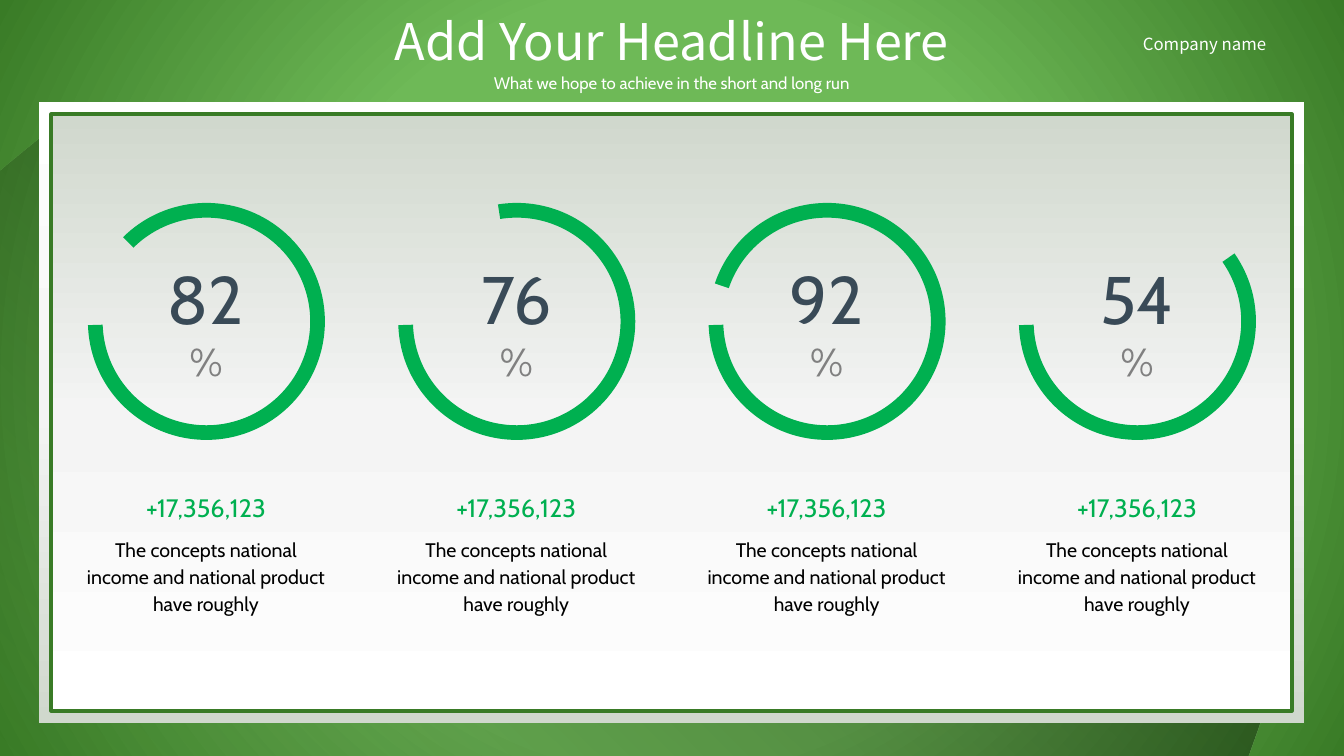
"""Build a slide of four percentage rings in a framed panel."""
import pptx
import pptx.util
import pptx.dml.color
import pptx.enum.shapes
import pptx.enum.text
import pptx.oxml.ns
import lxml.etree

HEAD = "Add Your Headline Here"
SUB = "What we hope to achieve in the short and long run"
FIRM = "Company name"
RINGS = [("82", 135.18), ("76", 156.51), ("92", 119.22), ("54", 194.99)]
TOTAL = "+17,356,123"
NOTE = "The concepts national income and national product have roughly"

COLORS = {
    "leaf": "6EB957", "moss": "397B26", "ring": "00B050", "slate": "394A57",
    "gray": "808080", "white": "FFFFFF", "pale": "F4F4F4", "sage": "D0D8CD",
    "black": "000000",
}
SANS, CABIN = "Noto Sans CJK SC", "Cabin"
SHADE = [(39, 139), (1269, 694), (1247, 756), (0, 756), (0, 171)]
PANEL = [(0, "white", 100), (50, "pale", 100), (100, "sage", 100)]
FIRST, LAST = 206, 1137
RING_END, RING_THICK = 106.92, 0.062
SCALE = 914400 / 100.8
SHAPES = pptx.enum.shapes.MSO_SHAPE
ANCHOR = pptx.enum.text.MSO_ANCHOR
ALIGN = pptx.enum.text.PP_ALIGN


def emu(px):
    return pptx.util.Emu(round(px * SCALE))


def rgb(name):
    return pptx.dml.color.RGBColor.from_string(COLORS[name])


def blend(owner, fill, stops, angle=None):
    """Give a fill its stops; without an angle it runs out from the centre."""
    fill.gradient()
    tag = pptx.oxml.ns.qn
    node = owner.find(".//" + tag("a:gradFill"))
    node.clear()
    add = lxml.etree.SubElement
    items = add(node, tag("a:gsLst"))
    for pos, name, alpha in stops:
        stop = add(items, tag("a:gs"), pos=str(pos * 1000))
        color = add(stop, tag("a:srgbClr"), val=COLORS[name])
        if alpha < 100:
            add(color, tag("a:alpha"), val=str(alpha * 1000))
    if angle is None:
        course = add(node, tag("a:path"), path="circle")
        add(course, tag("a:fillToRect"), l="50000", t="50000", r="50000", b="50000")
    else:
        add(node, tag("a:lin"), ang=str(angle * 60000), scaled="0")


def plain(shape):
    shape.shadow.inherit = False
    shape.line.fill.background()
    return shape


def block(slide, kind, box, bends):
    shape = plain(slide.shapes.add_shape(kind, *map(emu, box)))
    for i, bend in enumerate(bends):
        shape.adjustments[i] = bend
    return shape


def write(slide, text, box, size=12, font=CABIN, color="white", align=ALIGN.CENTER,
          anchor=ANCHOR.TOP, wrap=False, space=None, tail=None):
    """Add a text box; tail is a (text, size, color) on a second line."""
    frame = slide.shapes.add_textbox(*map(emu, box)).text_frame
    frame.word_wrap = wrap
    frame.vertical_anchor = anchor
    para = frame.paragraphs[0]
    para.alignment = align
    if space:
        para.line_spacing = space
    for i, (words, points, shade) in enumerate([(text, size, color)] + ([tail] if tail else [])):
        if i:
            para.add_line_break()
        run = para.add_run()
        run.text = words
        run.font.size = pptx.util.Pt(points)
        run.font.name = font
        run.font.color.rgb = rgb(shade)


def column(slide, mid, value, start):
    ring = block(slide, SHAPES.BLOCK_ARC, (mid - 118, 203, 237, 237),
                 (start, RING_END, RING_THICK))
    ring.fill.solid()
    ring.fill.fore_color.rgb = rgb("ring")
    write(slide, value, (mid - 60, 275, 120, 92), size=48, color="slate",
          anchor=ANCHOR.MIDDLE, tail=("%", 28, "gray"))
    write(slide, NOTE, (mid - 131, 530, 262, 92), size=14, color="black",
          wrap=True, space=1.14)
    write(slide, TOTAL, (mid - 85, 487, 170, 40), size=18, color="ring")


def main():
    deck = pptx.Presentation()
    deck.slide_width, deck.slide_height = emu(1344), emu(756)
    slide = deck.slides.add_slide(deck.slide_layouts[6])
    blend(slide.element, slide.background.fill, [(50, "leaf", 100), (100, "moss", 100)])

    write(slide, FIRM, (1133, 29, 157, 30), font=SANS, align=ALIGN.LEFT)
    path = slide.shapes.build_freeform(*SHADE[0], scale=SCALE)
    path.add_line_segments(SHADE[1:], close=True)
    shade = plain(path.convert_to_shape())
    blend(shade.element, shade.fill, [(0, "black", 50), (100, "black", 0)], 135)

    outer = block(slide, SHAPES.ROUNDED_RECTANGLE, (39, 102, 1265, 621), (0,))
    blend(outer.element, outer.fill, PANEL, 90)
    inner = block(slide, SHAPES.ROUNDED_RECTANGLE, (51, 114, 1241, 597), (0,))
    blend(inner.element, inner.fill, PANEL, 270)
    inner.line.color.rgb = rgb("moss")
    inner.line.width = pptx.util.Pt(2.25)

    write(slide, HEAD, (365, 5, 614, 72), size=36, font=SANS)
    write(slide, SUB, (481, 66, 382, 32), space=1.1)
    step = (LAST - FIRST) / (len(RINGS) - 1)
    for i, (value, start) in enumerate(RINGS):
        column(slide, FIRST + i * step, value, start)
    deck.save("out.pptx")


if __name__ == "__main__":
    main()
